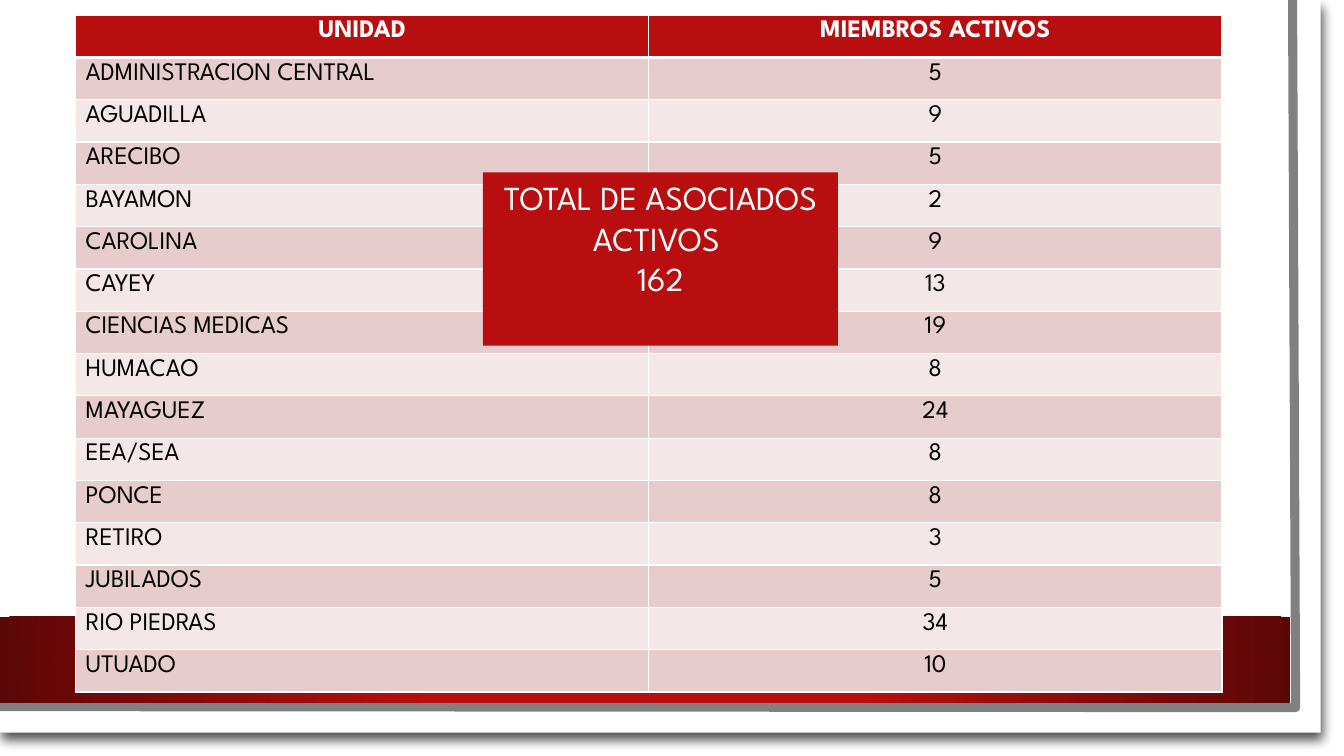
from lxml import etree
from pptx import Presentation, util as u
from pptx.dml.color import RGBColor
from pptx.enum import shapes, text
from pptx.oxml.ns import qn

SLIDE_W, SLIDE_H = 13.33, 7.5
FONT = "League Spartan"
RED, DARK_RED, WHITE, BLACK, GREY = "B80E0F", "5C0707", "FFFFFF", "000000", "808080"
BANDS = ("E6CCCC", "F3E7E7")
ROW_H, COL_W = 0.42, 5.685

HEADINGS = ("UNIDAD", "MIEMBROS ACTIVOS")
MEMBERS = (
    ("ADMINISTRACION CENTRAL", 5), ("AGUADILLA", 9), ("ARECIBO", 5),
    ("BAYAMON", 2), ("CAROLINA", 9), ("CAYEY", 13), ("CIENCIAS MEDICAS", 19),
    ("HUMACAO", 8), ("MAYAGUEZ", 24), ("EEA/SEA", 8), ("PONCE", 8),
    ("RETIRO", 3), ("JUBILADOS", 5), ("RIO PIEDRAS", 34), ("UTUADO", 10),
)


def color(hex_code):
    return RGBColor.from_string(hex_code)


def xml_child(parent, tag, **attributes):
    values = {name: str(value) for name, value in attributes.items()}
    return etree.SubElement(parent, qn(tag), values)


def solid(fill, hex_code):
    fill.solid()
    fill.fore_color.rgb = color(hex_code)


def write(paragraph, words, hex_code, size, align, bold=False):
    paragraph.text = words
    paragraph.alignment = align
    for name, value in dict(name=FONT, size=u.Pt(size), bold=bold).items():
        setattr(paragraph.font, name, value)
    paragraph.font.color.rgb = color(hex_code)


def add_panel(slide, left, top, width, height, hex_code):
    panel = slide.shapes.add_shape(
        shapes.MSO_SHAPE.RECTANGLE, *map(u.Inches, (left, top, width, height)))
    panel.shadow.inherit = False
    solid(panel.fill, hex_code)
    panel.line.fill.background()
    return panel


def add_shadow(panel):
    effects = panel._element.spPr.find(qn("a:effectLst"))
    shadow = xml_child(effects, "a:outerShdw", blurRad=u.Pt(7.8), dist=u.Pt(6),
                       dir=73 * 60000, algn="tl", rotWithShape=0)
    xml_child(xml_child(shadow, "a:srgbClr", val=BLACK), "a:alpha", val=68000)


def add_glow_gradient(panel):
    panel.fill.gradient()
    stops = panel.fill.gradient_stops
    for stop, position, hex_code in zip(stops, (0.34, 1), (RED, DARK_RED)):
        stop.position = position
        stop.color.rgb = color(hex_code)
    gradient = panel._element.spPr.find(qn("a:gradFill"))
    gradient.remove(gradient.find(qn("a:lin")))
    circle = xml_child(gradient, "a:path", path="circle")
    xml_child(circle, "a:fillToRect", l=50000, t=50000, r=50000, b=50000)


def add_frame(slide, corners):
    points = [(u.Inches(x), u.Inches(y)) for x, y in corners]
    builder = slide.shapes.build_freeform(*points[0])
    builder.add_line_segments(points[1:], close=False)
    frame = builder.convert_to_shape()
    frame.shadow.inherit = False
    frame.fill.background()
    frame.line.width = u.Pt(6.5)
    frame.line.color.rgb = color(GREY)


def add_borders(cell, bottom):
    properties = cell._tc.get_or_add_tcPr()
    for side, width in dict(L=1, R=1, T=1, B=bottom).items():
        line = xml_child(properties, "a:ln" + side, w=u.Pt(width))
        xml_child(xml_child(line, "a:solidFill"), "a:srgbClr", val=WHITE)


def add_member_table(slide, left, top):
    records = (HEADINGS,) + MEMBERS
    table = slide.shapes.add_table(
        len(records), len(HEADINGS), u.Inches(left), u.Inches(top),
        u.Inches(COL_W * len(HEADINGS)), u.Inches(ROW_H * len(records))).table
    for row_no, record in enumerate(records):
        heading = row_no == 0
        for col_no, value in enumerate(record):
            cell = table.cell(row_no, col_no)
            add_borders(cell, 3 if heading or row_no == 0 else 1)
            solid(cell.fill, RED if heading else BANDS[(row_no - 1) % 2])
            centred = heading or col_no == 1
            write(cell.text_frame.paragraphs[0], str(value),
                  WHITE if heading else BLACK, 18,
                  text.PP_ALIGN.CENTER if centred else text.PP_ALIGN.LEFT, heading)


def add_total(slide, left, top, width, height, lines):
    frame = add_panel(slide, left, top, width, height, RED).text_frame
    frame.word_wrap = True
    frame.vertical_anchor = text.MSO_ANCHOR.TOP
    for number, words in enumerate(lines):
        paragraph = frame.add_paragraph() if number else frame.paragraphs[0]
        write(paragraph, words, WHITE, 24, text.PP_ALIGN.CENTER)


def main():
    deck = Presentation()
    deck.slide_width, deck.slide_height = u.Inches(SLIDE_W), u.Inches(SLIDE_H)
    slide = deck.slides.add_slide(deck.slide_layouts[6])

    # Backdrop: sheet with shadow, grey edge and red band
    add_shadow(add_panel(slide, 0, 0, 13.1, 7.27, WHITE))
    add_frame(slide, ((12.82, 0), (12.85, 7.02), (-0.03, 7.01)))
    add_glow_gradient(add_panel(slide, 0, 6.12, 12.8, 0.85, RED))

    # Members by unit
    add_member_table(slide, 0.75, 0.15)

    # Total callout
    add_total(slide, 4.79, 1.71, 3.52, 1.72,
              ("TOTAL DE ASOCIADOS ACTIVOS ", "162"))
    deck.save("out.pptx")


if __name__ == "__main__":
    main()
